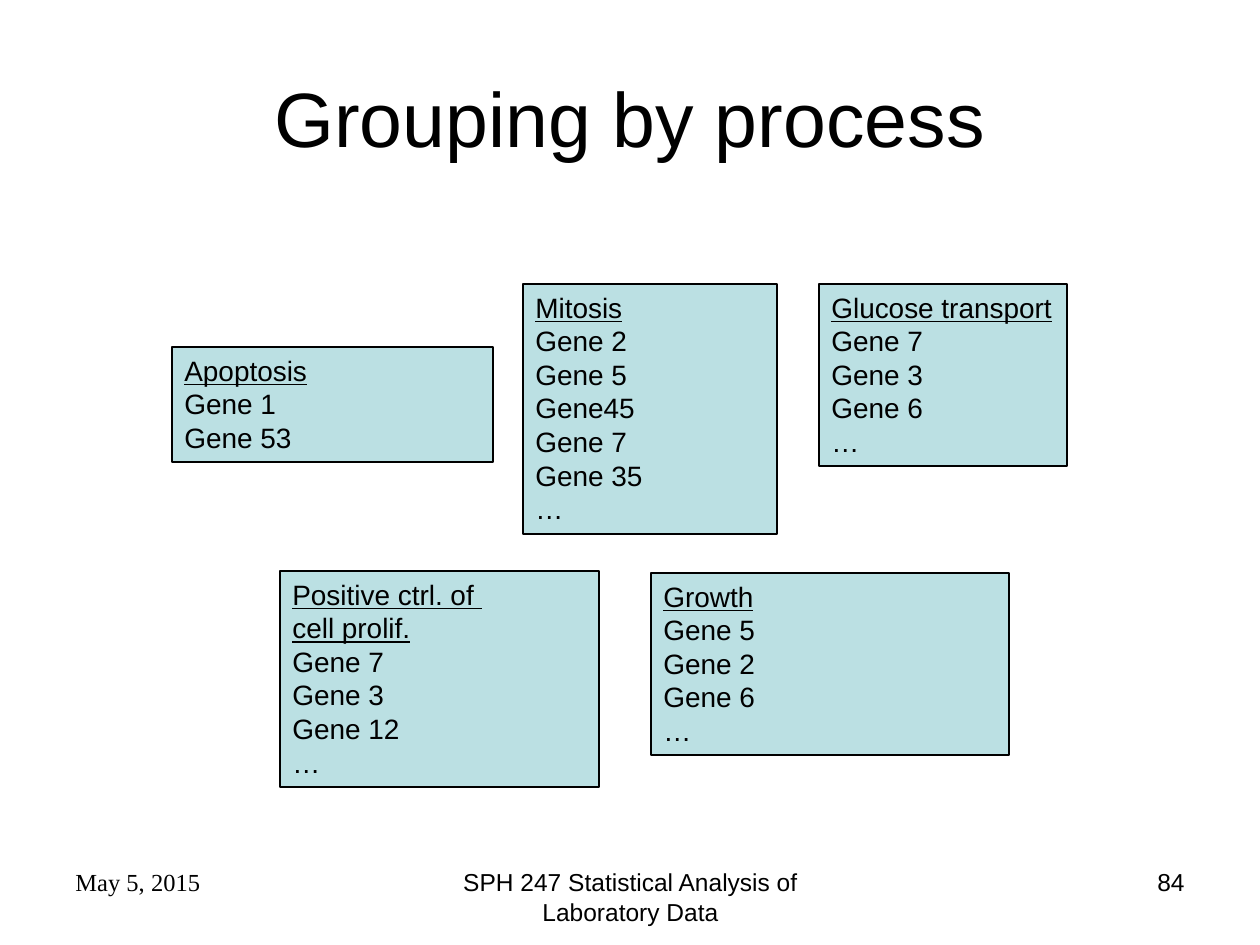
from pptx import Presentation
from pptx.dml.color import RGBColor
from pptx.enum.shapes import MSO_SHAPE
from pptx.enum.text import MSO_ANCHOR, MSO_AUTO_SIZE, PP_ALIGN
from pptx.util import Emu, Pt

COLORS = {"text": "000000", "line": "000000", "box": "BBE0E3"}
PX_PER_INCH = 126
LINE_HEIGHT, BOX_PADDING = 33.7, 14

TITLE = "Grouping by process"
GROUPS = [
    {"at": (172, 347), "width": 321, "heading": ["Apoptosis"],
     "genes": ["Gene 1", "Gene 53"]},
    {"at": (523, 284), "width": 254, "heading": ["Mitosis"],
     "genes": ["Gene 2", "Gene 5", "Gene45", "Gene 7", "Gene 35", "…"]},
    {"at": (280, 571), "width": 319, "heading": ["Positive ctrl. of ", "cell prolif."],
     "genes": ["Gene 7", "Gene 3", "Gene 12", "…"]},
    {"at": (651, 573), "width": 358, "heading": ["Growth"],
     "genes": ["Gene 5", "Gene 2", "Gene 6", "…"]},
    {"at": (819, 284), "width": 248, "heading": ["Glucose transport"],
     "genes": ["Gene 7", "Gene 3", "Gene 6", "…"], "wrap": False},
]
FOOTERS = [
    {"text": "May 5, 2015", "left": 63, "width": 294,
     "align": PP_ALIGN.LEFT, "font": "Times New Roman"},
    {"text": "SPH 247 Statistical Analysis of Laboratory Data", "left": 431, "width": 399,
     "align": PP_ALIGN.CENTER, "font": "Arial"},
    {"text": "84", "left": 903, "width": 294,
     "align": PP_ALIGN.RIGHT, "font": "Arial"},
]


def px(*lengths):
    return [Emu(round(length * 914400 / PX_PER_INCH)) for length in lengths]


def write(box, lines, size, font="Arial", align=PP_ALIGN.LEFT,
          anchor=MSO_ANCHOR.TOP, underlined=0, wrap=True):
    frame = box.text_frame
    frame.word_wrap = wrap
    frame.vertical_anchor = anchor
    for index, line in enumerate(lines):
        para = frame.paragraphs[0] if index == 0 else frame.add_paragraph()
        para.alignment = align
        span = para.add_run()
        span.text = line
        span.font.name = font
        span.font.size = Pt(size)
        span.font.underline = index < underlined
        span.font.color.rgb = RGBColor.from_string(COLORS["text"])


def add_group(page, group):
    lines = group["heading"] + group["genes"]
    height = round(BOX_PADDING + LINE_HEIGHT * len(lines))
    box = page.shapes.add_shape(
        MSO_SHAPE.RECTANGLE, *px(*group["at"], group["width"], height))
    box.shadow.inherit = False
    box.fill.solid()
    box.fill.fore_color.rgb = RGBColor.from_string(COLORS["box"])
    box.line.color.rgb = RGBColor.from_string(COLORS["line"])
    box.line.width = Pt(0.75)
    write(box, lines, 16, underlined=len(group["heading"]), wrap=group.get("wrap", True))
    box.text_frame.auto_size = MSO_AUTO_SIZE.SHAPE_TO_FIT_TEXT


def main():
    deck = Presentation()
    deck.slide_width, deck.slide_height = px(1260, 945)
    page = deck.slides.add_slide(deck.slide_layouts[6])

    title = page.shapes.add_textbox(*px(63, 38, 1134, 157))
    write(title, [TITLE], 44, align=PP_ALIGN.CENTER, anchor=MSO_ANCHOR.MIDDLE)
    for group in GROUPS:
        add_group(page, group)
    for footer in FOOTERS:
        box = page.shapes.add_textbox(*px(footer["left"], 861, footer["width"], 66))
        write(box, [footer["text"]], 14, font=footer["font"], align=footer["align"])

    deck.save("out.pptx")


if __name__ == "__main__":
    main()
